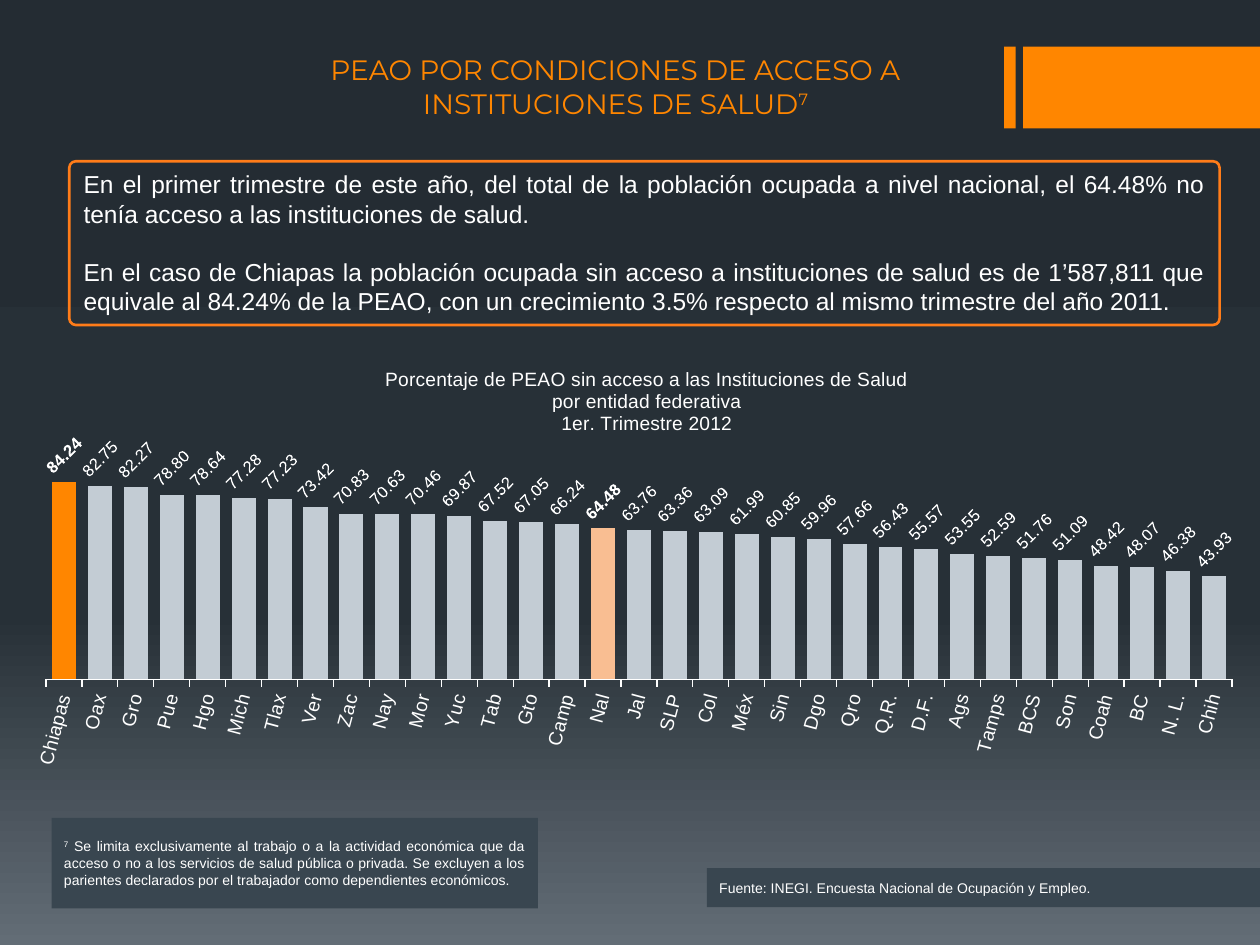
from dataclasses import dataclass
from lxml import etree
from copy import deepcopy
from pptx import Presentation
from pptx.chart.data import CategoryChartData
from pptx.dml.color import RGBColor
from pptx.enum.chart import XL_CHART_TYPE, XL_LABEL_POSITION, XL_TICK_MARK
from pptx.enum.shapes import MSO_SHAPE
from pptx.enum.text import MSO_ANCHOR, PP_ALIGN
from pptx.oxml.ns import qn
from pptx.util import Inches, Pt

RECT, ROUNDED = MSO_SHAPE.RECTANGLE, MSO_SHAPE.ROUNDED_RECTANGLE
TOP, MIDDLE = MSO_ANCHOR.TOP, MSO_ANCHOR.MIDDLE
CENTER, JUSTIFY = PP_ALIGN.CENTER, PP_ALIGN.JUSTIFY
COLUMN = XL_CHART_TYPE.COLUMN_CLUSTERED
OUTSIDE_END = XL_LABEL_POSITION.OUTSIDE_END
TICK_NONE, TICK_OUT = XL_TICK_MARK.NONE, XL_TICK_MARK.OUTSIDE


@dataclass(frozen=True)
class Theme:
    accent: RGBColor = RGBColor.from_string("FF8600")
    border: RGBColor = RGBColor.from_string("FF7C19")
    national: RGBColor = RGBColor.from_string("F9BE92")
    bar: RGBColor = RGBColor.from_string("C3CCD4")
    panel: RGBColor = RGBColor.from_string("394650")
    text: RGBColor = RGBColor.from_string("FFFFFF")
    background: tuple = ((0, "242C33"), (0.65, "273037"), (1, "636D76"))
    body_font: str = "Arial"
    title_font: str = "Montserrat"
    title: int = 16
    body: int = 14
    chart_title: int = 11
    chart: int = 10
    value: float = 9.5
    note: int = 8


T = Theme()

RATES = {
    "Chiapas": 84.24, "Oax": 82.75, "Gro": 82.27, "Pue": 78.80, "Hgo": 78.64,
    "Mich": 77.28, "Tlax": 77.23, "Ver": 73.42, "Zac": 70.83, "Nay": 70.63,
    "Mor": 70.46, "Yuc": 69.87, "Tab": 67.52, "Gto": 67.05, "Camp": 66.24,
    "Nal": 64.48, "Jal": 63.76, "SLP": 63.36, "Col": 63.09, "Méx": 61.99,
    "Sin": 60.85, "Dgo": 59.96, "Qro": 57.66, "Q.R.": 56.43, "D.F.": 55.57,
    "Ags": 53.55, "Tamps": 52.59, "BCS": 51.76, "Son": 51.09, "Coah": 48.42,
    "BC": 48.07, "N. L.": 46.38, "Chih": 43.93,
}
HIGHLIGHTS = {"Chiapas": T.accent, "Nal": T.national}
CHART_TITLE = (
    "Porcentaje de PEAO sin acceso a las Instituciones de Salud",
    "por entidad federativa",
    "1er. Trimestre 2012",
)
FINDINGS = (
    "En el primer trimestre de este año, del total de la población ocupada a nivel nacional, "
    "el 64.48% no tenía acceso a las instituciones de salud.",
    "En el caso de Chiapas la población ocupada sin acceso a instituciones de salud es de "
    "1’587,811 que equivale al 84.24% de la PEAO, con un crecimiento 3.5% respecto al mismo "
    "trimestre del año 2011.",
)
FOOTNOTE = (
    " Se limita exclusivamente al trabajo o a la actividad económica que da acceso o no a los "
    "servicios de salud pública o privada. Se excluyen a los parientes declarados por el "
    "trabajador como dependientes económicos."
)


def set_font(font, size, color=T.text, name=T.body_font, bold=False):
    font.size, font.name, font.bold = Pt(size), name, bold
    font.color.rgb = color


def add_run(p, text, superscript=False):
    r = p.add_run()
    r.text = text
    if superscript:
        r._r.get_or_add_rPr().set("baseline", "30000")


def add_box(slide, box, kind=RECT, fill=None, line=None):
    s = slide.shapes.add_shape(kind, *map(Inches, box))
    s.shadow.inherit = False
    if fill:
        s.fill.solid()
        s.fill.fore_color.rgb = fill
    else:
        s.fill.background()
    if line:
        s.line.color.rgb = line
        s.line.width = Pt(1.5)
    else:
        s.line.fill.background()
    return s


def add_background(slide):
    fill = slide.background.fill
    fill.gradient()
    fill.gradient_angle = 270
    last = fill.gradient_stops[-1]._gs
    last.addprevious(deepcopy(last))
    for stop, (position, color) in zip(fill.gradient_stops, T.background):
        stop.position = position
        stop.color.rgb = RGBColor.from_string(color)


def add_corner_bars(slide, box):
    x, y, w, h = box
    thin, gap = 0.09, 0.06
    add_box(slide, (x, y, thin, h), fill=T.accent)
    add_box(slide, (x + thin + gap, y, w - thin - gap, h), fill=T.accent)


def add_title(slide, box):
    tf = slide.shapes.add_textbox(*map(Inches, box)).text_frame
    tf.word_wrap = True
    p = tf.paragraphs[0]
    p.alignment = CENTER
    add_run(p, "PEAO POR CONDICIONES DE ACCESO A INSTITUCIONES DE SALUD")
    add_run(p, "7", superscript=True)
    set_font(p.font, T.title, T.accent, T.title_font)


def add_findings(slide, box):
    s = add_box(slide, box, ROUNDED, line=T.border)
    s.adjustments[0] = 0.04
    tf = s.text_frame
    tf.vertical_anchor = TOP
    tf.text = "\n".join(FINDINGS)
    for p in tf.paragraphs:
        p.alignment = JUSTIFY
        set_font(p.font, T.body)
    tf.paragraphs[1].space_before = Pt(T.body * 1.17)


def add_note(slide, box, text, mark=None):
    tf = add_box(slide, box, fill=T.panel).text_frame
    tf.vertical_anchor = MIDDLE
    p = tf.paragraphs[0]
    p.alignment = JUSTIFY
    if mark:
        add_run(p, mark, superscript=True)
    add_run(p, text)
    set_font(p.font, T.note)


def set_layout(parent, index, **values):
    layout = parent.find(qn("c:layout"))
    if layout is None:
        layout = etree.Element(qn("c:layout"))
        parent.insert(index, layout)
    manual = etree.SubElement(layout, qn("c:manualLayout"))
    for tag, value in values.items():
        etree.SubElement(manual, qn(f"c:{tag}")).set("val", str(value))


def add_rates_chart(slide, box):
    data = CategoryChartData(number_format="0.00")
    data.categories = list(RATES)
    data.add_series("Series 1", list(RATES.values()))
    chart = slide.shapes.add_chart(COLUMN, *map(Inches, box), data).chart
    set_font(chart.font, T.chart)
    chart.has_legend = False

    tf = chart.chart_title.text_frame
    tf.text = "\n".join(CHART_TITLE)
    for p in tf.paragraphs:
        set_font(p.font, T.chart_title)
    set_layout(chart.chart_title._element, 1, xMode="edge", yMode="edge", x=0.29, y=0.02)
    plot_area = chart._chartSpace.chart.plotArea
    set_layout(plot_area, 0, layoutTarget="inner", xMode="edge", yMode="edge",
               x=0.01, y=0.27, w=0.99, h=0.49)

    values, names = chart.value_axis, chart.category_axis
    values.visible = values.has_major_gridlines = False
    values.minimum_scale, values.maximum_scale = 0, 90
    names.major_tick_mark, names.minor_tick_mark = TICK_OUT, TICK_NONE
    names.format.line.color.rgb = T.text
    set_font(names.tick_labels.font, T.chart_title)
    names._element.find(".//" + qn("a:bodyPr")).set("rot", "-4500000")

    plot = chart.plots[0]
    plot.gap_width = 50
    plot.vary_by_categories = False
    series = plot.series[0]
    series.format.fill.solid()
    series.format.fill.fore_color.rgb = T.bar
    labels = series.data_labels
    labels.show_value = True
    labels.number_format, labels.number_format_is_linked = "0.00", False
    labels.position = OUTSIDE_END
    set_font(labels.font, T.value)
    for name, color in HIGHLIGHTS.items():
        point = series.points[list(RATES).index(name)]
        point.format.fill.solid()
        point.format.fill.fore_color.rgb = color
        set_font(point.data_label.font, T.value, bold=True)
        point.data_label.position = OUTSIDE_END
    for body in labels._element.iter(qn("a:bodyPr")):
        body.set("rot", "-2700000")


def main():
    prs = Presentation()
    prs.slide_width, prs.slide_height = Inches(10), Inches(7.5)
    slide = prs.slides.add_slide(prs.slide_layouts[6])
    add_background(slide)
    add_corner_bars(slide, (7.97, 0.37, 2.03, 0.65))
    add_findings(slide, (0.55, 1.28, 9.13, 1.3))
    add_rates_chart(slide, (0.27, 2.8, 9.54, 3.41))
    add_title(slide, (1.84, 0.37, 6.09, 0.64))
    add_note(slide, (5.61, 6.89, 4.39, 0.31),
             "Fuente: INEGI. Encuesta Nacional de Ocupación y Empleo.")
    add_note(slide, (0.41, 6.49, 3.86, 0.72), FOOTNOTE, mark="7")
    prs.save("out.pptx")


if __name__ == "__main__":
    main()
